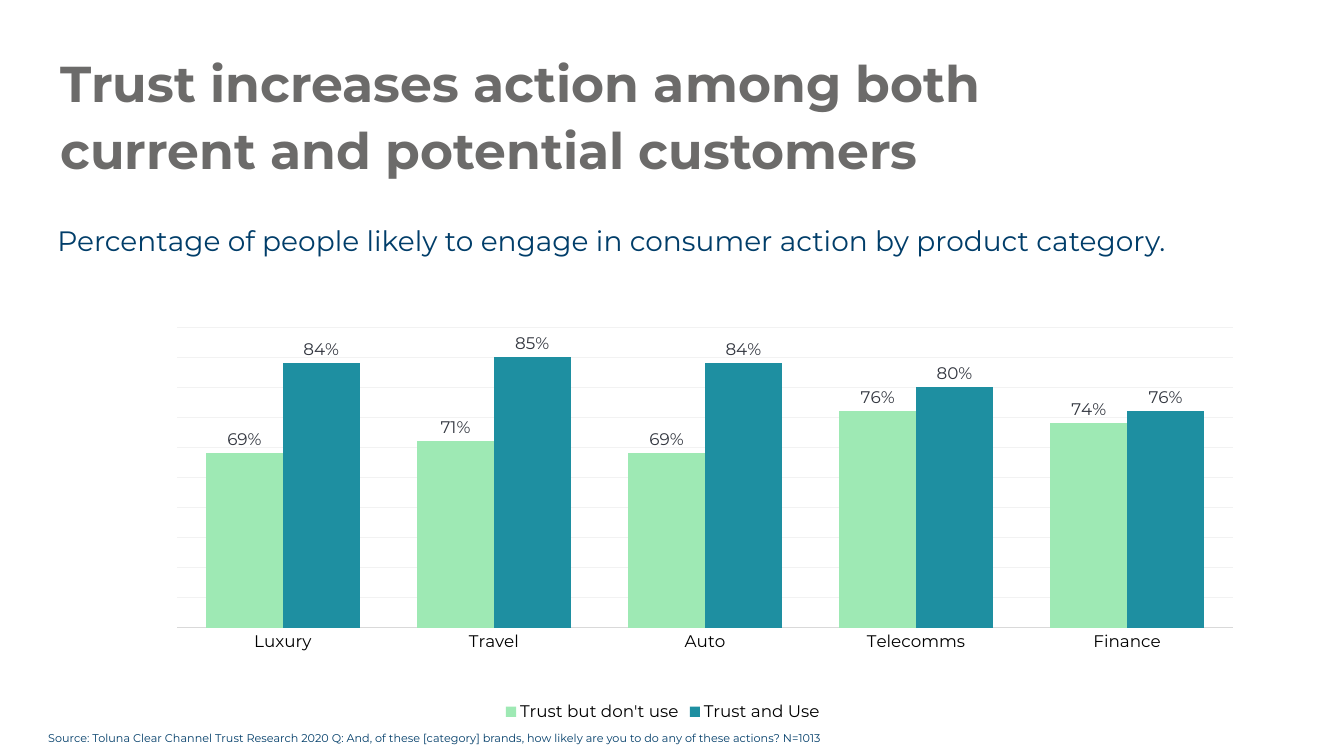
from lxml import etree
from pptx import Presentation
from pptx.chart.data import CategoryChartData
from pptx.dml.color import RGBColor
from pptx.enum.chart import XL_CHART_TYPE, XL_LABEL_POSITION, XL_LEGEND_POSITION, XL_TICK_MARK
from pptx.enum.text import MSO_ANCHOR
from pptx.oxml.ns import qn
from pptx.util import Inches, Pt

COLUMNS = XL_CHART_TYPE.COLUMN_CLUSTERED
OUTSIDE_END = XL_LABEL_POSITION.OUTSIDE_END
LEGEND_BOTTOM = XL_LEGEND_POSITION.BOTTOM
NO_TICK = XL_TICK_MARK.NONE
TOP = MSO_ANCHOR.TOP

FONT = "Montserrat"
COLORS = {
    "heading": "6C6B6A",
    "navy": "003D69",
    "label": "32363F",
    "black": "000000",
    "axis": "D9D9D9",
    "grid": "F2F2F2",
    "green": "9EE9B4",
    "teal": "1E8FA1",
}

TEXTS = [
    {"text": "Trust increases action among both current and potential customers",
     "at": (0.6, 0.46, 9.23, 0.6), "size": 36, "color": "heading",
     "bold": True, "spacing": 1.1, "inset": (0, 0)},
    {"text": "Percentage of people likely to engage in consumer action by product category.",
     "at": (0.47, 2.17, 11.69, 0.44), "size": 20, "color": "navy",
     "bold": False, "spacing": 1.0, "inset": (0.1, 0.05)},
    {"text": "Source: Toluna Clear Channel Trust Research 2020 Q: And, of these [category] "
             "brands, how likely are you to do any of these actions? N=1013",
     "at": (0.38, 7.21, 12.72, 0.24), "size": 8, "color": "navy",
     "bold": False, "spacing": 1.0, "inset": (0.1, 0.05)},
]

CATEGORIES = ["Luxury", "Travel", "Auto", "Telecomms", "Finance"]
SERIES = [
    ("Trust but don't use", (0.69, 0.71, 0.69, 0.76, 0.74), "green"),
    ("Trust and Use", (0.84, 0.85, 0.84, 0.80, 0.76), "teal"),
]
CHART_AT = (0.6, 3.03, 11.95, 4.17)
PLOT_LAYOUT = {
    "layoutTarget": "inner", "xMode": "edge", "yMode": "edge",
    "x": 0.1, "y": 0.05, "w": 0.88, "h": 0.72,
}
PLOT_LAYOUT.update(x=0.097, y=0.052, w=0.876, h=0.715)


def rgb(name):
    return RGBColor.from_string(COLORS[name])


def style_font(font, size, color, bold=False):
    font.name = FONT
    font.size = Pt(size)
    font.bold = bold
    font.color.rgb = rgb(color)


def style_line(line, color):
    line.color.rgb = rgb(color)
    line.width = Pt(0.75)


def add_text(slide, item):
    frame = slide.shapes.add_textbox(*map(Inches, item["at"])).text_frame
    frame.word_wrap = True
    frame.vertical_anchor = TOP
    side, edge = map(Inches, item["inset"])
    frame.margin_left = frame.margin_right = side
    frame.margin_top = frame.margin_bottom = edge
    paragraph = frame.paragraphs[0]
    paragraph.line_spacing = item["spacing"]
    run = paragraph.add_run()
    run.text = item["text"]
    style_font(run.font, item["size"], item["color"], item["bold"])


def place_plot(chart):
    plot_area = chart._chartSpace.chart.plotArea
    for old_layout in plot_area.findall(qn("c:layout")):
        plot_area.remove(old_layout)
    layout = etree.Element(qn("c:layout"))
    manual = etree.SubElement(layout, qn("c:manualLayout"))
    for tag, value in PLOT_LAYOUT.items():
        etree.SubElement(manual, qn(f"c:{tag}")).set("val", str(value))
    plot_area.insert(0, layout)


def add_trust_chart(slide):
    trust_data = CategoryChartData(number_format="0%")
    trust_data.categories = CATEGORIES
    for name, values, _ in SERIES:
        trust_data.add_series(name, values)
    chart = slide.shapes.add_chart(COLUMNS, *map(Inches, CHART_AT), trust_data).chart
    chart.has_title = False
    style_font(chart.font, 12, "label")

    chart.has_legend = True
    chart.legend.position = LEGEND_BOTTOM
    chart.legend.include_in_layout = False
    style_font(chart.legend.font, 12, "black")

    categories = chart.category_axis
    categories.major_tick_mark = categories.minor_tick_mark = NO_TICK
    style_font(categories.tick_labels.font, 12, "black")
    style_line(categories.format.line, "axis")

    percent = chart.value_axis
    percent.minimum_scale, percent.maximum_scale, percent.major_unit = 0.4, 0.9, 0.05
    percent.has_major_gridlines = True
    style_line(percent.major_gridlines.format.line, "grid")
    percent.visible = False

    columns = chart.plots[0]
    columns.gap_width = 75
    columns.overlap = 0
    columns.vary_by_categories = False
    for series, (_, _, color) in zip(columns.series, SERIES):
        series.format.fill.solid()
        series.format.fill.fore_color.rgb = rgb(color)
        series.invert_if_negative = False
        labels = series.data_labels
        labels.show_value = True
        labels.position = OUTSIDE_END
        labels.number_format = "0%"
        labels.number_format_is_linked = False
        style_font(labels.font, 12, "label")
    place_plot(chart)


def main():
    deck = Presentation()
    deck.slide_width, deck.slide_height = Inches(13.33), Inches(7.5)
    slide = deck.slides.add_slide(deck.slide_layouts[6])
    for item in TEXTS:
        add_text(slide, item)
    add_trust_chart(slide)
    deck.save("out.pptx")


if __name__ == "__main__":
    main()
